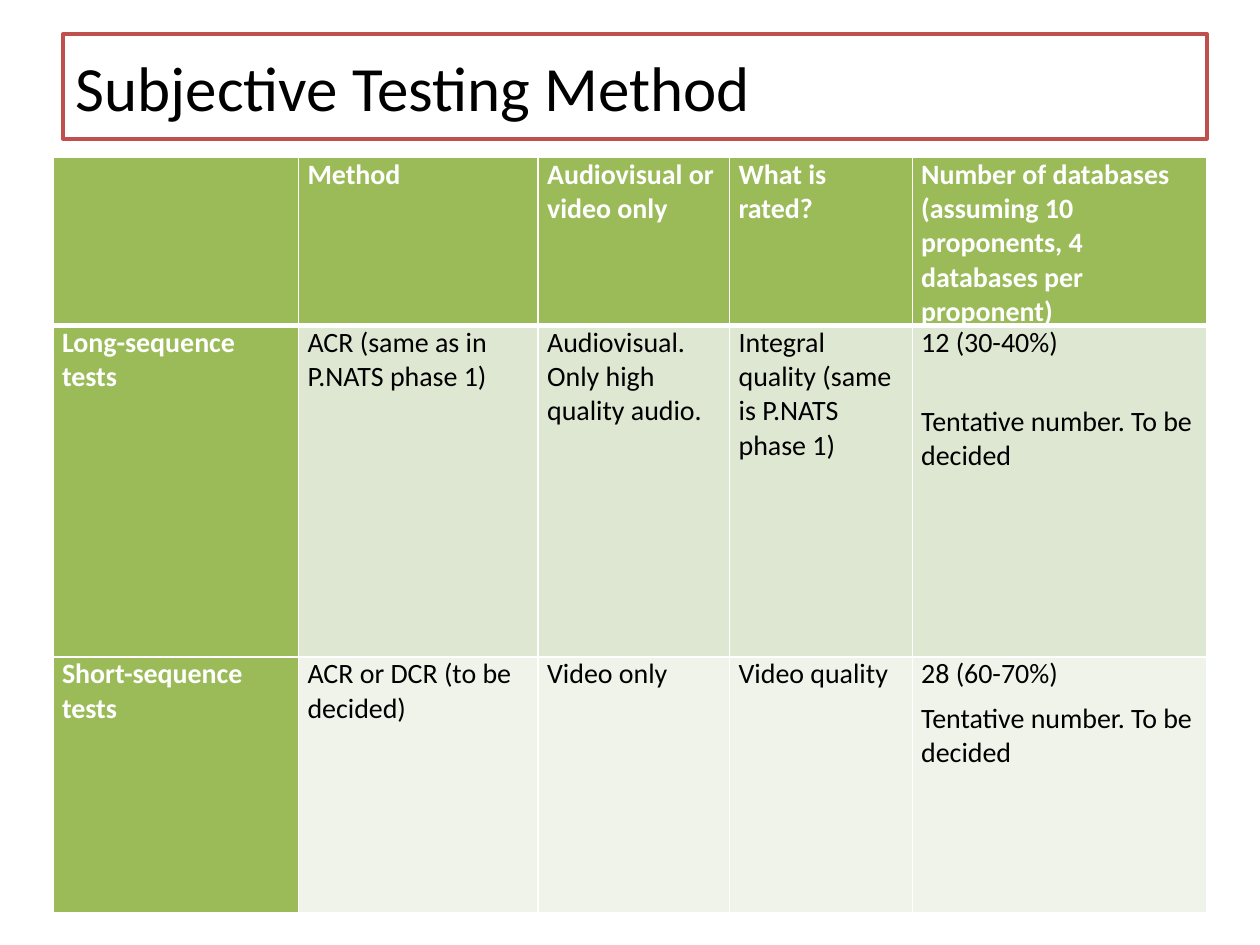
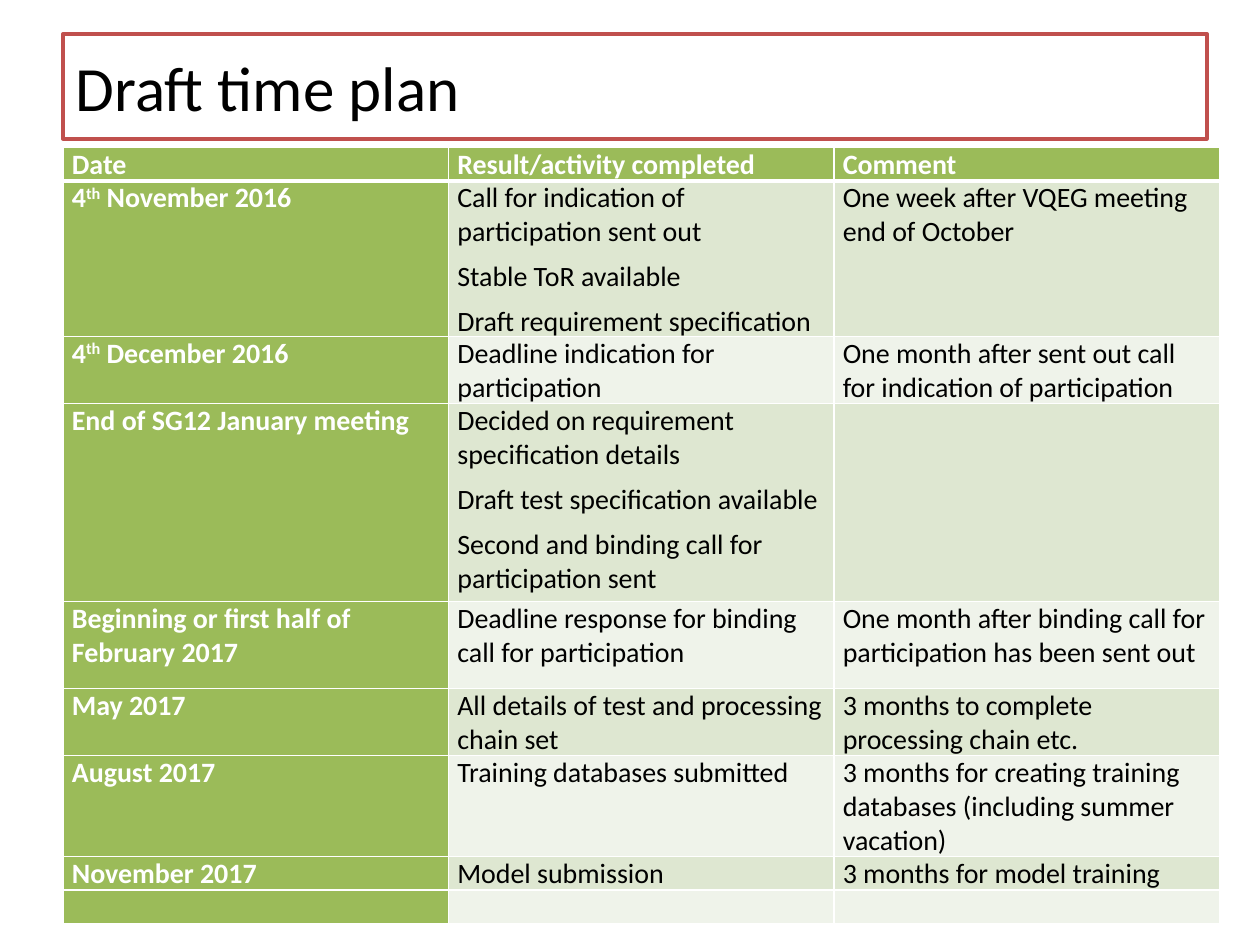
"""Build two slides: the subjective testing method and the draft time plan."""
import dataclasses

import lxml.etree
import pptx
import pptx.dml.color
import pptx.enum.text
import pptx.oxml.ns
import pptx.util

Cm = pptx.util.Cm
Pt = pptx.util.Pt


@dataclasses.dataclass(frozen=True)
class Theme:
    font: str = "Calibri"
    head: int = 36
    body: int = 16
    gap: int = 6
    thin: int = 1
    thick: int = 3
    frame: int = 2
    white: str = "FFFFFF"
    black: str = "000000"
    red: str = "C0504D"
    green: str = "9BBB59"
    bands: tuple = ("DEE7D1", "EFF3EA")


theme = Theme()
rgb = pptx.dml.color.RGBColor.from_string
qn = pptx.oxml.ns.qn


def write(frame, text, size=theme.body, color=theme.black, bold=False, gap=0):
    """Fill a frame: a newline starts a paragraph, and carets enclose superscript."""
    for row, line in enumerate(text.split("\n")):
        para = frame.add_paragraph() if row else frame.paragraphs[0]
        para.alignment = pptx.enum.text.PP_ALIGN.LEFT
        para.space_before = Pt(gap)
        if not line:
            end = lxml.etree.SubElement(para._p, qn("a:endParaRPr"))
            end.set("sz", str(size * 100))
        for part, piece in enumerate(line.split("^") if line else []):
            run = para.add_run()
            run.text = piece
            run.font.name = theme.font
            run.font.size = Pt(size)
            run.font.bold = bold
            run.font.color.rgb = rgb(color)
            if part % 2:
                run._r.get_or_add_rPr().set("baseline", "30000")


def edge(cell, side, width):
    """Draw one white cell border."""
    line = lxml.etree.SubElement(cell._tc.get_or_add_tcPr(), qn("a:ln" + side))
    line.set("w", str(Pt(width)))
    fill = lxml.etree.SubElement(line, qn("a:solidFill"))
    lxml.etree.SubElement(fill, qn("a:srgbClr")).set("val", theme.white)


tests = [
    ["", "Method", "Audiovisual or video only", "What is rated?",
     "Number of databases (assuming 10 proponents, 4 databases per proponent)"],
    ["Long-sequence tests", "ACR (same as in P.NATS phase 1)",
     "Audiovisual. Only high quality audio.",
     "Integral quality (same is P.NATS phase 1)",
     "12 (30-40%)\nTentative number. To be decided"],
    ["Short-sequence tests", "ACR or DCR (to be decided)", "Video only",
     "Video quality", "28 (60-70%)\nTentative number. To be decided"],
]
plan = [
    ["Date", "Result/activity completed", "Comment"],
    ["4^th^ November 2016",
     "Call for indication of participation sent out\nStable ToR available\n"
     "Draft requirement specification",
     "One week after VQEG meeting end of October"],
    ["4^th^ December 2016", "Deadline indication for participation",
     "One month after sent out call for indication of participation"],
    ["End of SG12 January meeting",
     "Decided on requirement specification details\n"
     "Draft test specification available\n"
     "Second and binding call for participation sent", ""],
    ["Beginning or first half of February 2017",
     "Deadline response for binding call for participation",
     "One month after binding call for participation has been sent out"],
    ["May 2017", "All details of test and processing chain set",
     "3 months to complete processing chain etc."],
    ["August 2017", "Training databases submitted",
     "3 months for creating training databases (including summer vacation)"],
    ["November 2017", "Model submission", "3 months for model training"],
    ["", "", ""],
]
pages = [
    ("Subjective Testing Method", tests, 1.07, 3.18,
     [4.95, 4.83, 3.86, 3.68, 5.94], [2.77, 6.68, 5.16]),
    ("Draft time plan", plan, 1.27, 2.97, [7.77] * 3,
     [0.58, 2.82, 1.17, 3.99, 1.75, 1.17, 1.75, 0.58, 0.58]),
]

deck = pptx.Presentation()
deck.slide_width, deck.slide_height = Cm(25.4), Cm(19.05)
grids = []

for name, data, left, top, wide, high in pages:
    slide = deck.slides.add_slide(deck.slide_layouts[5])
    title = slide.shapes.title
    title.left, title.top = Cm(1.27), Cm(0.84)
    title.width, title.height = Cm(23.06), Cm(1.8)
    title.fill.solid()
    title.fill.fore_color.rgb = rgb(theme.white)
    title.line.color.rgb = rgb(theme.red)
    title.line.width = Pt(theme.frame)
    write(title.text_frame, name, size=theme.head)
    title.text_frame.auto_size = pptx.enum.text.MSO_AUTO_SIZE.SHAPE_TO_FIT_TEXT

    grid = slide.shapes.add_table(len(high), len(wide), Cm(left), Cm(top),
                                  Cm(sum(wide)), Cm(sum(high))).table
    grids.append(grid)
    for col, width in zip(grid.columns, wide):
        col.width = Cm(width)
    for row, height in enumerate(high):
        grid.rows[row].height = Cm(height)
        for col, text in enumerate(data[row]):
            cell = grid.cell(row, col)
            label = row == 0 or col == 0
            cell.margin_left = cell.margin_right = Cm(0.18)
            cell.margin_top = cell.margin_bottom = 0
            for side in "LRTB":
                thick = (side, row) in (("B", 0), ("T", 1))
                edge(cell, side, theme.thick if thick else theme.thin)
            cell.fill.solid()
            cell.fill.fore_color.rgb = rgb(
                theme.green if label else theme.bands[(row - 1) % 2])
            write(cell.text_frame, text, bold=label, gap=theme.gap,
                  color=theme.white if label else theme.black)

note = grids[0].cell(1, 4).text_frame.paragraphs[1]
note.space_before = Pt(theme.gap + 1.22 * theme.body)

deck.save("out.pptx")
